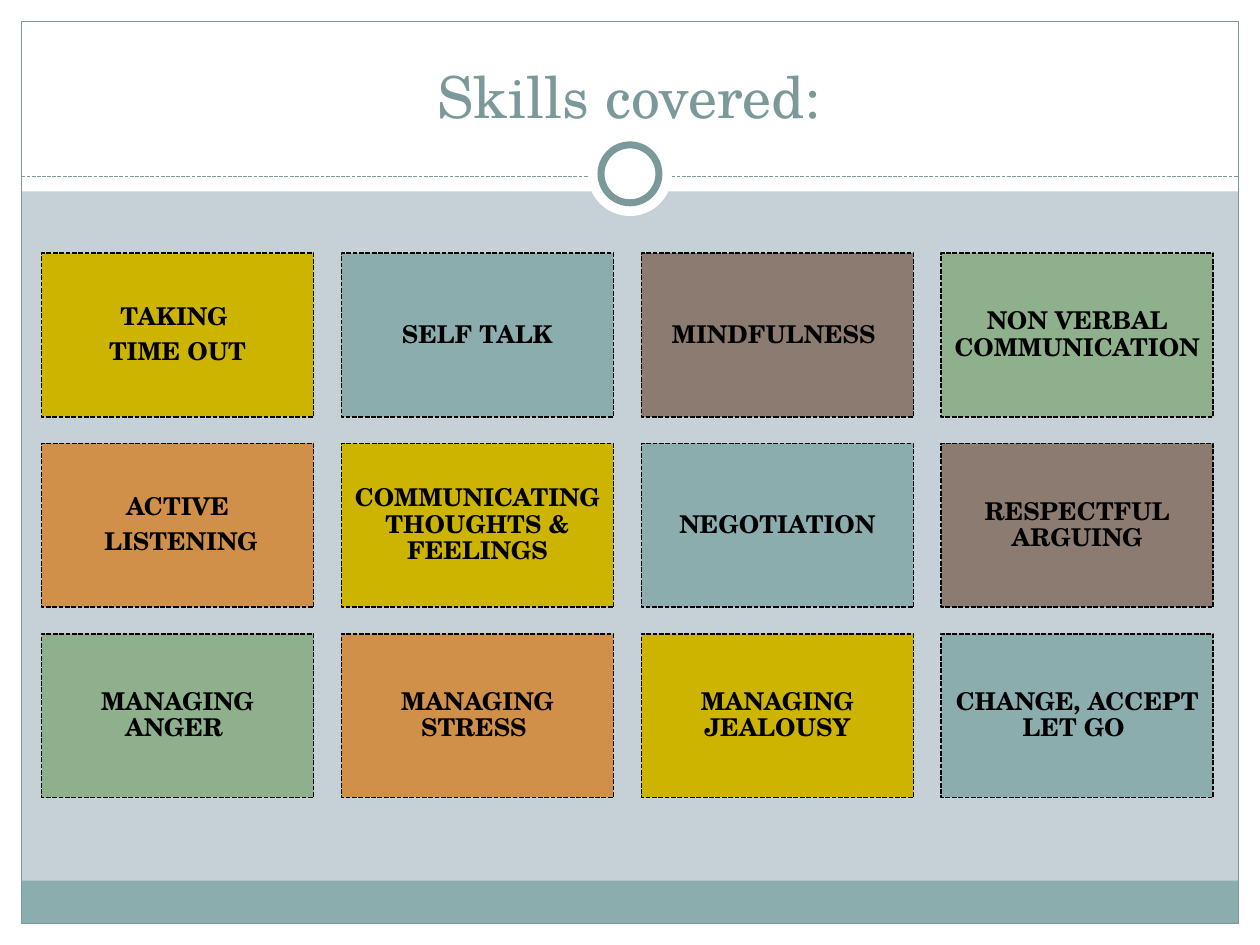
import pptx
import pptx.dml.color
import pptx.enum.dml
import pptx.enum.shapes
import pptx.enum.text
import pptx.oxml.ns
import pptx.util
from dataclasses import dataclass

In, Pt = pptx.util.Inches, pptx.util.Pt
RGB = pptx.dml.color.RGBColor.from_string
SHAPE = pptx.enum.shapes.MSO_SHAPE
ANCHOR = pptx.enum.text.MSO_ANCHOR
CENTER = pptx.enum.text.PP_ALIGN.CENTER
DASH = pptx.enum.dml.MSO_LINE.SQUARE_DOT


@dataclass(frozen=True)
class Theme:
    font: str = "TeX Gyre Schola"
    title_size: float = 33
    tile_size: float = 14
    background: str = "C5D1D7"
    white: str = "FFFFFF"
    black: str = "000000"
    accent: str = "7C999A"
    teal: str = "8CADAE"
    tiles: tuple = ("CCB400", "8CADAE", "8C7B70", "8FB08C", "D19049")


theme = Theme()
W, H = 10, 7.5
EDGE = 0.17
HEADER_H = 1.52
RULE_Y = 1.4
FOOTER_H = 0.34

prs = pptx.Presentation()
prs.slide_width, prs.slide_height = In(W), In(H)
s = prs.slides.add_slide(prs.slide_layouts[6])
s.background.fill.solid()
s.background.fill.fore_color.rgb = RGB(theme.background)


def add_box(kind, x, y, w, h, fill=None, line=None, width=0.75):
    """Add a shadowless shape, in inches; no fill or line unless given."""
    sp = s.shapes.add_shape(kind, In(x), In(y), In(w), In(h))
    sp.shadow.inherit = False
    if fill:
        sp.fill.solid()
        sp.fill.fore_color.rgb = RGB(fill)
    else:
        sp.fill.background()
    if line:
        sp.line.color.rgb = RGB(line)
        sp.line.width = Pt(width)
    else:
        sp.line.fill.background()
    return sp


def style_text(p, size, color, bold=False):
    p.alignment = CENTER
    p.font.name, p.font.size, p.font.bold = theme.font, Pt(size), bold
    p.font.color.rgb = RGB(color)


# White margins and header, footer band, frame
for x, y, w, h in [
    (0, H - EDGE, W, EDGE),
    (0, 0, W, HEADER_H),
    (0, 0, EDGE, H),
    (W - EDGE, 0, EDGE, H),
]:
    add_box(SHAPE.RECTANGLE, x, y, w, h, theme.white)
add_box(SHAPE.RECTANGLE, EDGE, H - EDGE - FOOTER_H, W - 2 * EDGE, FOOTER_H, theme.teal)
add_box(SHAPE.RECTANGLE, EDGE, EDGE, W - 2 * EDGE, H - 2 * EDGE, line=theme.accent)

# Dashed rule with the ring at its middle
rule = s.shapes.add_connector(
    pptx.enum.shapes.MSO_CONNECTOR.STRAIGHT, In(EDGE), In(RULE_Y), In(W - EDGE), In(RULE_Y)
)
rule.line.color.rgb = RGB(theme.accent)
rule.line.width = Pt(0.75)
rule.line.dash_style = DASH
rule._element.spPr.append(pptx.oxml.parse_xml(f"<a:effectLst {pptx.oxml.ns.nsdecls('a')}/>"))
RING_Y = 1.38
for d, line in [(0.67, None), (0.46, theme.accent)]:
    add_box(SHAPE.OVAL, (W - d) / 2, RING_Y - d / 2, d, d, theme.white, line, 4)

# Title
tf = s.shapes.add_textbox(In(0.33), In(0.25), In(9.33), In(0.83)).text_frame
tf.word_wrap = True
tf.vertical_anchor = ANCHOR.BOTTOM
tf.text = "Skills covered:"
style_text(tf.paragraphs[0], theme.title_size, theme.accent)

# Skill tiles: the fills repeat in order across the grid
COLS = 4
LEFT, TOP = 0.33, 2.01
TILE_W, TILE_H = 2.16, 1.3
COL_STEP, ROW_STEP = 2.38, 1.51
INSET = 0.06
skills = [
    "TAKING \nTIME OUT", "SELF TALK", "MINDFULNESS ", "NON VERBAL COMMUNICATION",
    "ACTIVE\n LISTENING", "COMMUNICATING THOUGHTS & FEELINGS", "NEGOTIATION", "RESPECTFUL ARGUING",
    "MANAGING ANGER ", "MANAGING STRESS ", "MANAGING JEALOUSY", "CHANGE, ACCEPT LET GO ",
]
for i, skill in enumerate(skills):
    row, col = divmod(i, COLS)
    sp = add_box(
        SHAPE.RECTANGLE, LEFT + col * COL_STEP, TOP + row * ROW_STEP, TILE_W, TILE_H,
        theme.tiles[i % len(theme.tiles)], theme.black, 0.9,
    )
    sp.line.dash_style = DASH
    tf = sp.text_frame
    tf.word_wrap = True
    tf.vertical_anchor = ANCHOR.MIDDLE
    tf.margin_left = tf.margin_right = tf.margin_top = tf.margin_bottom = In(INSET)
    tf.text = skill
    for p in tf.paragraphs:
        style_text(p, theme.tile_size, theme.black, bold=True)
        p.line_spacing = 0.9
        p.space_after = Pt(0.35 * theme.tile_size)

prs.save("out.pptx")
